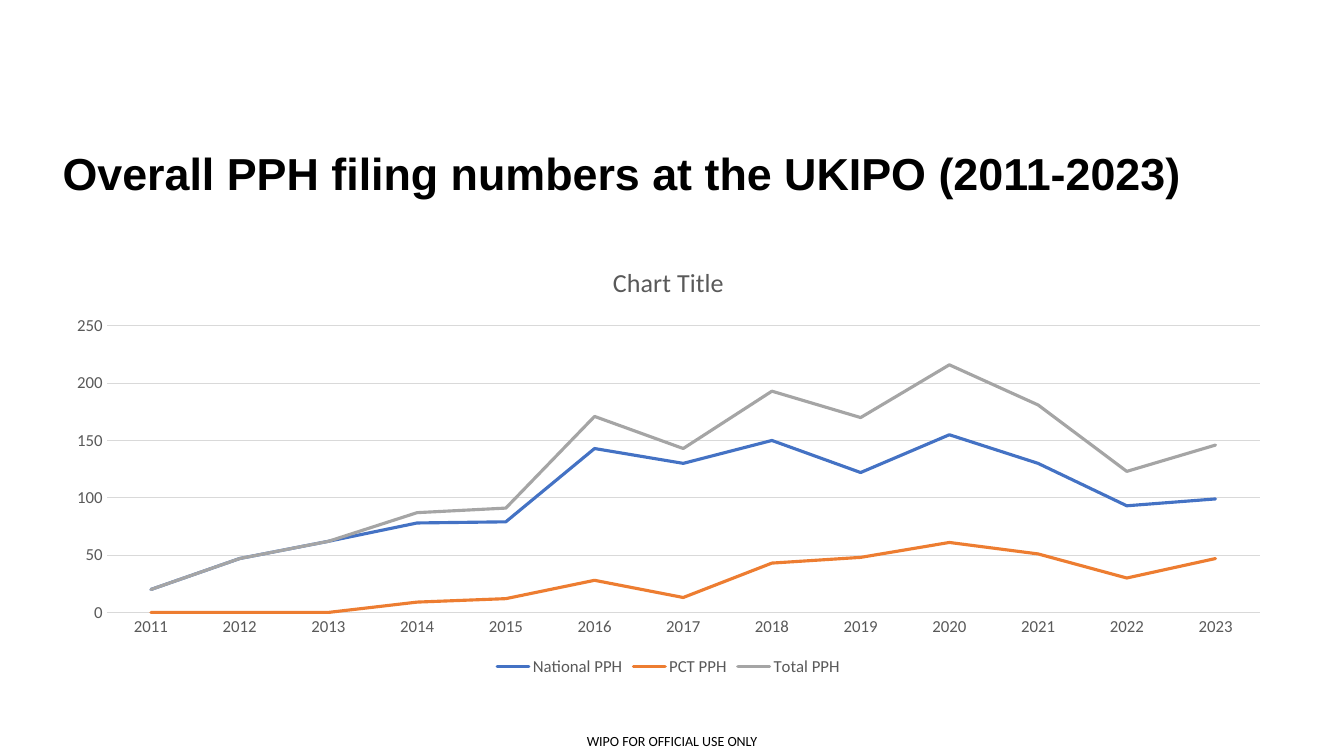
from lxml import etree
from pptx import Presentation
from pptx.chart.data import CategoryChartData
from pptx.dml.color import RGBColor
from pptx.enum import chart as ch, text as tx
from pptx.util import Inches, Pt

GREY, RULE = "595959", "D9D9D9"
YEARS = [str(y) for y in range(2011, 2024)]
HOME = [20, 47, 62, 78, 79, 143, 130, 150, 122, 155, 130, 93, 99]
PCT = [0, 0, 0, 9, 12, 28, 13, 43, 48, 61, 51, 30, 47]
SERIES = [
    ("National PPH", HOME, "4472C4"),
    ("PCT PPH", PCT, "ED7D31"),
    ("Total PPH", [a + b for a, b in zip(HOME, PCT)], "A5A5A5"),
]


def paint(color, code):
    color.rgb = RGBColor.from_string(code)


def style(font, size, code, name="Calibri", bold=False):
    font.size, font.name, font.bold = Pt(size), name, bold
    paint(font.color, code)


def stroke(line, code, width):
    paint(line.color, code)
    line.width = Pt(width)


def place(shape, *box):
    shape.left, shape.top, shape.width, shape.height = map(Inches, box)


def add_title(slide, words):
    title = slide.shapes.title
    place(title, 0.52, 1.4, 12.22, 0.7)
    frame = title.text_frame
    frame.text = words
    frame.word_wrap = True
    frame.auto_size = tx.MSO_AUTO_SIZE.NONE
    frame.vertical_anchor = tx.MSO_ANCHOR.MIDDLE
    para = frame.paragraphs[0]
    para.alignment = tx.PP_ALIGN.LEFT
    para.line_spacing = 0.9
    style(para.font, 32, "000000", "Arial", True)


def add_note(slide, words):
    box = slide.shapes.add_textbox(*map(Inches, (5.64, 7.21, 2.05, 0.29)))
    frame = box.text_frame
    frame.word_wrap = True
    frame.margin_left = frame.margin_right = 0
    frame.margin_top = frame.margin_bottom = 0
    frame.vertical_anchor = tx.MSO_ANCHOR.MIDDLE
    para = frame.paragraphs[0]
    para.text = words
    para.alignment = tx.PP_ALIGN.CENTER
    style(para.font, 10, "000000")


def set_axis(axis):
    axis.major_tick_mark = axis.minor_tick_mark = ch.XL_TICK_MARK.NONE
    style(axis.tick_labels.font, 12, GREY)


def add_graph(slide):
    data = CategoryChartData()
    data.categories = YEARS
    for name, vals, _ in SERIES:
        data.add_series(name, vals)
    box = map(Inches, (0.52, 2.43, 12.22, 4.32))
    chart = slide.shapes.add_chart(ch.XL_CHART_TYPE.LINE, *box, data).chart
    style(chart.font, 10, "000000")

    # Heading and legend
    chart.has_title = True
    head = chart.chart_title.text_frame
    head.text = "Chart Title"
    style(head.paragraphs[0].font, 18.6, GREY)
    chart.chart_title.include_in_layout = False
    chart.has_legend = True
    chart.legend.position = ch.XL_LEGEND_POSITION.BOTTOM
    chart.legend.include_in_layout = False
    style(chart.legend.font, 12, GREY)

    # Axes
    cat, val = chart.category_axis, chart.value_axis
    set_axis(cat)
    set_axis(val)
    stroke(cat.format.line, RULE, 0.75)
    val.format.line.fill.background()
    val.has_major_gridlines = True
    stroke(val.major_gridlines.format.line, RULE, 0.75)
    val.minimum_scale, val.maximum_scale, val.major_unit = 0, 250, 50

    # Lines
    plot = chart.plots[0]
    plot.vary_by_categories = False
    for line, (_, _, code) in zip(plot.series, SERIES):
        line.smooth = False
        line.marker.style = ch.XL_MARKER_STYLE.NONE
        stroke(line.format.line, code, 2.25)
        # Round line ends
        line.format.line._get_or_add_ln().set("cap", "rnd")


def main():
    deck = Presentation()
    deck.slide_width, deck.slide_height = Inches(13.33), Inches(7.5)
    slide = deck.slides.add_slide(deck.slide_layouts[5])
    add_note(slide, "WIPO FOR OFFICIAL USE ONLY")
    add_title(slide, "Overall PPH filing numbers at the UKIPO (2011-2023)")
    add_graph(slide)
    deck.save("out.pptx")


if __name__ == "__main__":
    main()
